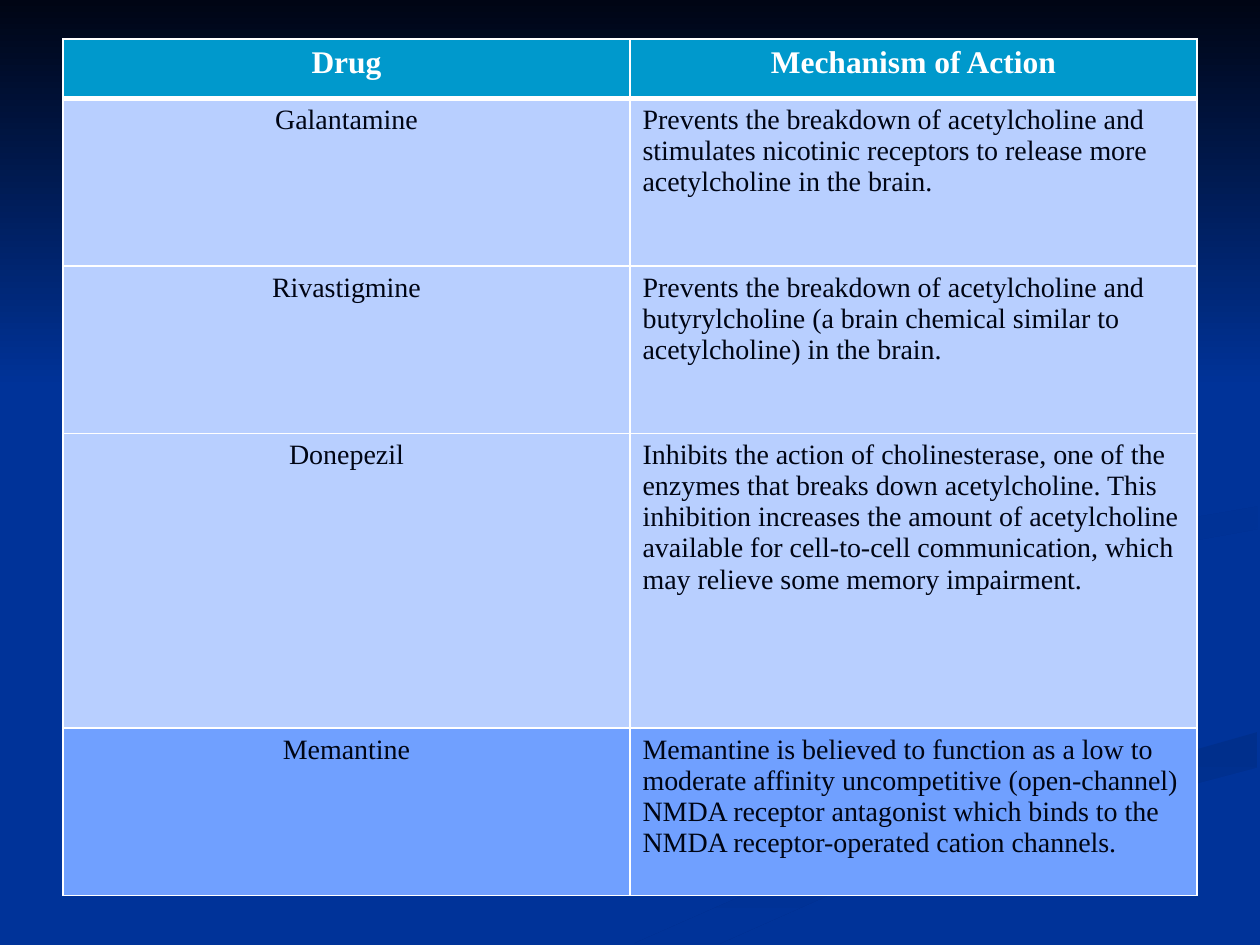
import pptx
import pptx.dml.color
import pptx.enum.text
import pptx.oxml
import pptx.oxml.ns
import pptx.util
from pptx.util import Inches

NAVY, NIGHT, WHITE = "003399", "000514", "FFFFFF"
HEADER, PALE, STRONG = "0099CC", "B8CFFF", "70A0FF"

LOWER_RIBBON = [(5.03, 7.49), (5.71, 7.49), (7.22, 6.82), (9.98, 6.09),
                (9.98, 5.81), (7.97, 6.38), (6.3, 6.93)]
UPPER_RIBBON = [(7.81, 4.6), (8.26, 4.96), (8.05, 4.72), (8.43, 4.48),
                (9.98, 4.2), (9.98, 4.02), (8.35, 4.3)]

DRUGS = [
    ("Drug", "Mechanism of Action"),
    ("Galantamine", "Prevents the breakdown of acetylcholine and stimulates "
     "nicotinic receptors to release more acetylcholine in the brain."),
    ("Rivastigmine", "Prevents the breakdown of acetylcholine and "
     "butyrylcholine (a brain chemical similar to acetylcholine) in the brain."),
    ("Donepezil", "Inhibits the action of cholinesterase, one of the enzymes "
     "that breaks down acetylcholine. This inhibition increases the amount of "
     "acetylcholine available for cell-to-cell communication, which may "
     "relieve some memory impairment."),
    ("Memantine", "Memantine is believed to function as a low to moderate "
     "affinity uncompetitive (open-channel) NMDA receptor antagonist which "
     "binds to the NMDA receptor-operated cation channels."),
]
ROW_HEIGHTS = [0.47, 1.33, 1.33, 2.34, 1.33]
ROW_FILLS = [HEADER, PALE, PALE, PALE, STRONG]


def color(code):
    return pptx.dml.color.RGBColor.from_string(code)


def write(frame, text, font="Times New Roman", size=16, ink=NIGHT, bold=False,
          centered=False):
    para = frame.paragraphs[0]
    align = pptx.enum.text.PP_ALIGN
    para.alignment = align.CENTER if centered else align.LEFT
    span = para.add_run()
    span.text = text
    span.font.name = font
    span.font.size = pptx.util.Pt(size)
    span.font.bold = bold
    span.font.color.rgb = color(ink)


def set_borders(cell, **widths):
    """Draw white cell edges; widths in points are keyed L, R, T, B."""
    properties = cell._tc.get_or_add_tcPr()
    for index, side in enumerate("LRTB"):
        width = int(pptx.util.Pt(widths.get(side, 1)))
        properties.insert(index, pptx.oxml.parse_xml(
            f'<a:ln{side} {pptx.oxml.ns.nsdecls("a")} w="{width}"><a:solidFill>'
            f'<a:srgbClr val="{WHITE}"/></a:solidFill></a:ln{side}>'))


class Slide:
    def __init__(self, deck, background):
        self.page = deck.slides.add_slide(deck.slide_layouts[6])
        fill = self.page.background.fill
        fill.solid()
        fill.fore_color.rgb = color(background)

    def outline(self, points, first, last, angle):
        """Draw a closed shape whose gradient angle runs clockwise."""
        corners = [(Inches(x), Inches(y)) for x, y in points]
        builder = self.page.shapes.build_freeform(*corners[0])
        builder.add_line_segments(corners[1:], close=True)
        shape = builder.convert_to_shape()
        shape.shadow.inherit = False
        shape.line.fill.background()
        shape.fill.gradient()
        shape.fill.gradient_angle = 360 - angle
        for stop, code in zip(shape.fill.gradient_stops, (first, last)):
            stop.color.rgb = color(code)

    def table(self, rows, heights, fills, left, top, width):
        table = self.page.shapes.add_table(
            len(rows), len(rows[0]), Inches(left), Inches(top),
            Inches(width), Inches(sum(heights))).table
        for r, (texts, height, fill) in enumerate(zip(rows, heights, fills)):
            table.rows[r].height = Inches(height)
            for c, text in enumerate(texts):
                cell = table.cell(r, c)
                cell.fill.solid()
                cell.fill.fore_color.rgb = color(fill)
                set_borders(cell, T=3 if r == 1 else 1, B=3 if r == 0 else 1)
                if r == 0:
                    write(cell.text_frame, text, size=18, ink=WHITE, bold=True,
                          centered=True)
                else:
                    write(cell.text_frame, text, centered=c == 0)


def main():
    deck = pptx.Presentation()
    deck.slide_width, deck.slide_height = Inches(10), Inches(7.5)
    slide = Slide(deck, NAVY)
    slide.outline(LOWER_RIBBON, "002F8C", NAVY, 90)
    slide.outline(UPPER_RIBBON, "003091", NAVY, 45)
    slide.outline([(0, 0), (0, 3.08), (10, 3.08), (10, 0)], NIGHT, NAVY, 90)
    slide.table(DRUGS, ROW_HEIGHTS, ROW_FILLS, left=0.5, top=0.31, width=9)
    deck.save("out.pptx")


if __name__ == "__main__":
    main()
